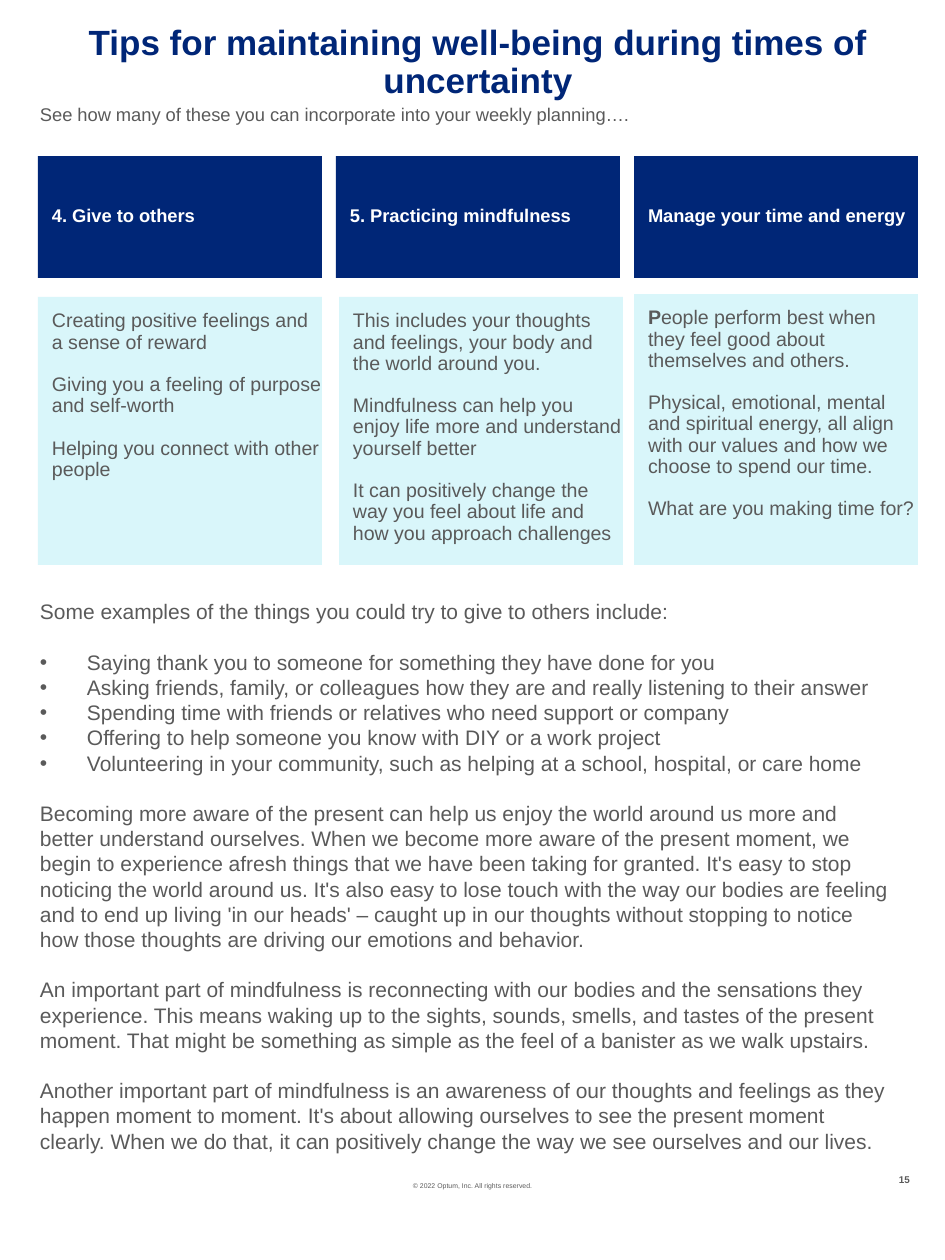
from dataclasses import dataclass

from lxml import etree
from pptx import Presentation, util as u
from pptx.dml.color import RGBColor
from pptx.enum import shapes, text
from pptx.oxml.ns import qn

PX = u.Inches(1) / 126


@dataclass(frozen=True)
class Theme:
    font: str = "Arial"
    navy: str = "002677"
    aqua: str = "D9F6FA"
    grey: str = "5A5A5A"
    white: str = "FFFFFF"
    title: float = 20
    label: float = 10.5
    card: float = 11.2
    body: float = 12
    page: float = 5.6
    legal: float = 3.9


theme = Theme()


def px(*lengths):
    return [u.Emu(round(length * PX)) for length in lengths]


def write(shape, paragraphs, size, color, bold=False, align=text.PP_ALIGN.LEFT,
          insets=(0, 0), anchor=text.MSO_ANCHOR.TOP, spacing=1.0, gap=0):
    """Fill a shape; a paragraph is a string or a list of (words, bold) runs."""
    frame = shape.text_frame
    frame.word_wrap = True
    frame.auto_size = text.MSO_AUTO_SIZE.NONE
    frame.vertical_anchor = anchor
    frame.margin_left, frame.margin_top = px(*insets)
    frame.margin_right = frame.margin_bottom = 0
    for index, runs in enumerate(paragraphs):
        paragraph = frame.add_paragraph() if index else frame.paragraphs[0]
        paragraph.alignment = align
        paragraph.line_spacing = spacing
        paragraph.space_before = u.Pt(gap if index else 0)
        for words, strong in [(runs, bold)] if isinstance(runs, str) else runs:
            run = paragraph.add_run()
            run.text = words
            run.font.name = theme.font
            run.font.size = u.Pt(size)
            run.font.bold = strong
            run.font.color.rgb = RGBColor.from_string(color)
    return frame


prs = Presentation()
prs.slide_width, prs.slide_height = px(945, 1260)
slide = prs.slides.add_slide(prs.slide_layouts[5])

# Heading
title = slide.shapes.title
title.left, title.top, title.width, title.height = px(23, 25, 910, 77)
write(title, ["Tips for maintaining well-being during times of uncertainty"],
      theme.title, theme.navy, bold=True, align=text.PP_ALIGN.CENTER, spacing=0.9)
intro = slide.shapes.add_textbox(*px(40, 103, 877, 38))
write(intro, ["See how many of these you can incorporate into your weekly planning…."],
      theme.label, theme.grey)

# Tips: heading, left and top of the card, card paragraphs
tips = [
    ("4. Give to others", 38, 297, [
        "Creating positive feelings and a sense of reward",
        "Giving you a feeling of purpose and self-worth",
        "Helping you connect with other people"]),
    ("5. Practicing mindfulness", 339, 297, [
        "This includes your thoughts and feelings, your body and the world around you.",
        "Mindfulness can help you enjoy life more and understand yourself better",
        "It can positively change the way you feel about life and how you approach challenges"]),
    ("Manage your time and energy", 634, 294, [
        [("P", True),
         ("eople perform best when they feel good about themselves and others.", False)],
        "Physical, emotional, mental and spiritual energy, all align with our values "
        "and how we choose to spend our time.",
        "What are you making time for?"]),
]
CARD_WIDTH, CARD_BOTTOM = 284, 565
for column, (heading, card_left, card_top, points) in enumerate(tips):
    blocks = [
        ((38 + 298 * column, 156, CARD_WIDTH, 122), theme.navy, [heading],
         dict(size=theme.label, color=theme.white, bold=True, insets=(14, 0),
              anchor=text.MSO_ANCHOR.MIDDLE)),
        ((card_left, card_top, CARD_WIDTH, CARD_BOTTOM - card_top), theme.aqua, points,
         dict(size=theme.card, color=theme.grey, insets=(14, 14), gap=12.2)),
    ]
    for place, fill, paragraphs, style in blocks:
        block = slide.shapes.add_shape(shapes.MSO_SHAPE.RECTANGLE, *px(*place))
        block.shadow.inherit = False
        block.fill.solid()
        block.fill.fore_color.rgb = RGBColor.from_string(fill)
        block.line.fill.background()
        write(block, paragraphs, spacing=0.9, **style)

# Examples and explanation
examples = [
    "Saying thank you to someone for something they have done for you",
    "Asking friends, family, or colleagues how they are and really listening to their answer",
    "Spending time with friends or relatives who need support or company",
    "Offering to help someone you know with DIY or a work project",
    "Volunteering in your community, such as helping at a school, hospital, or care home",
]
explanation = [
    "Becoming more aware of the present can help us enjoy the world around us more and "
    "better understand ourselves. When we become more aware of the present moment, we "
    "begin to experience afresh things that we have been taking for granted. It's easy to "
    "stop noticing the world around us. It's also easy to lose touch with the way our "
    "bodies are feeling and to end up living 'in our heads' – caught up in our thoughts "
    "without stopping to notice how those thoughts are driving our emotions and behavior.",
    "An important part of mindfulness is reconnecting with our bodies and the sensations "
    "they experience. This means waking up to the sights, sounds, smells, and tastes of the "
    "present moment. That might be something as simple as the feel of a banister as we walk "
    "upstairs.",
    "Another important part of mindfulness is an awareness of our thoughts and feelings as "
    "they happen moment to moment. It's about allowing ourselves to see the present moment "
    "clearly. When we do that, it can positively change the way we see ourselves and our "
    "lives.",
]
lead = "Some examples of the things you could try to give to others include:"
advice = slide.shapes.add_textbox(*px(28, 593, 864, 572))
advice_frame = write(advice, [lead, *examples, *explanation], theme.body, theme.grey,
                     insets=(12, 6), gap=14.4)
example_paragraphs = advice_frame.paragraphs[1:1 + len(examples)]
indent = px(47)[0]
for index, paragraph in enumerate(example_paragraphs):
    if index:
        paragraph.space_before = u.Pt(0)
    properties = paragraph._p.get_or_add_pPr()
    properties.set("marL", str(indent))
    properties.set("indent", str(-indent))
    etree.SubElement(properties, qn("a:buFont"), typeface=theme.font)
    etree.SubElement(properties, qn("a:buChar"), char="•")

# Footer
legal = slide.shapes.add_textbox(*px(364, 1182, 217, 9))
write(legal, ["© 2022 Optum, Inc. All rights reserved."], theme.legal, theme.grey,
      align=text.PP_ALIGN.CENTER)
page = slide.shapes.add_textbox(*px(897, 1174, 13, 11))
write(page, ["15"], theme.page, theme.grey, bold=True, align=text.PP_ALIGN.RIGHT)
page.text_frame.word_wrap = False

prs.save("out.pptx")
